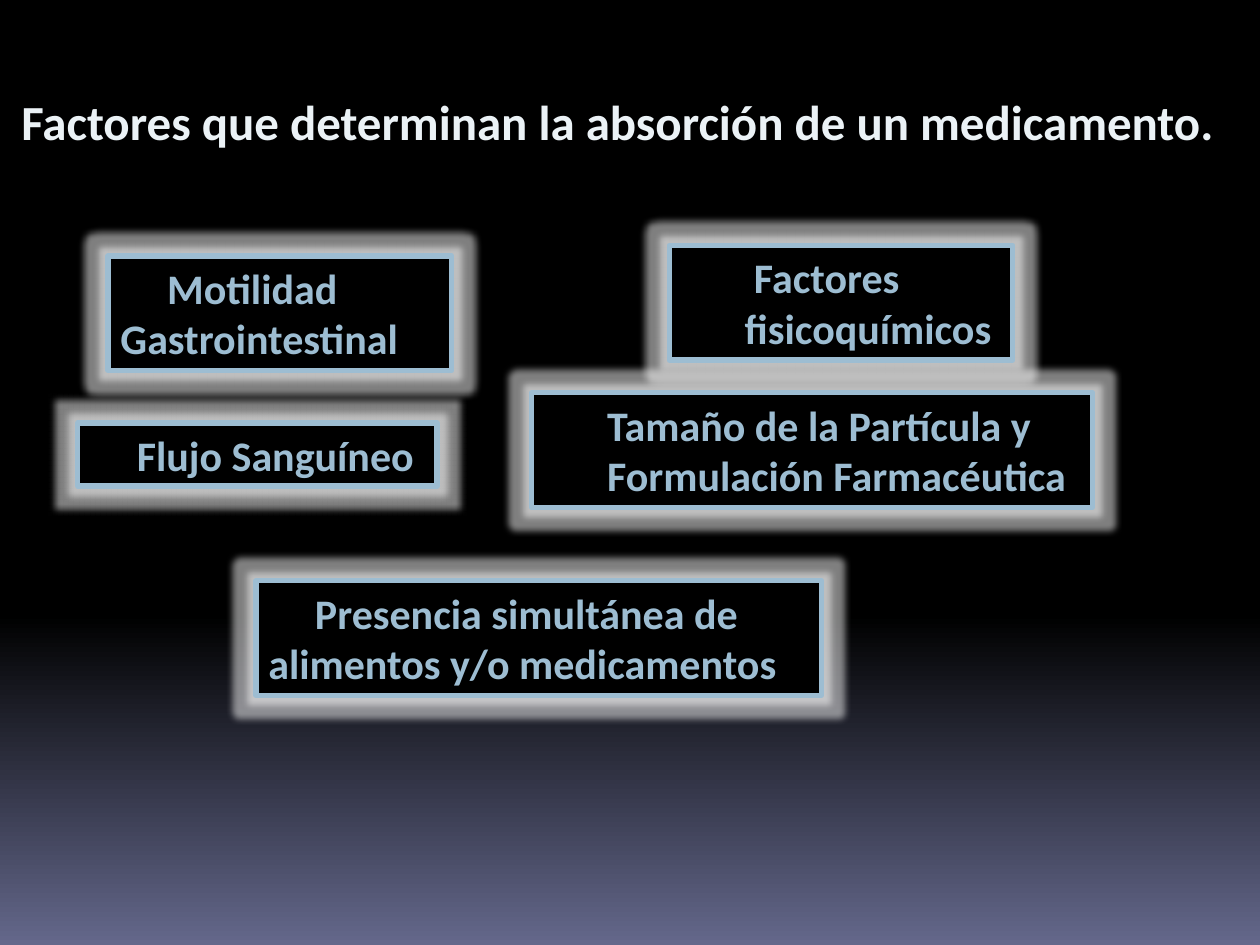
from dataclasses import dataclass

from lxml.etree import SubElement
from pptx import Presentation
from pptx.dml.color import RGBColor
from pptx.enum.shapes import MSO_SHAPE
from pptx.enum.text import MSO_ANCHOR, MSO_AUTO_SIZE, PP_ALIGN
from pptx.oxml.ns import qn
from pptx.util import Cm, Pt

BLACK, PALE_BLUE, ICE, WHITE = "000000", "9DBDD2", "EBF2F6", "FFFFFF"
BULLET_INDENT, SPACE_INDENT, LEVEL_INDENT = 0.94, 0.19, 1.27


@dataclass
class Factor:
    """A boxed factor: wording, place in centimetres and indents."""
    text: str
    left: float
    top: float
    width: float
    height: float = 2.31
    margin: float = 0
    first_line: float = BULLET_INDENT


FACTORS = [
    Factor("Motilidad Gastrointestinal", 2.18, 5.16, 6.93),
    Factor("Flujo Sanguíneo", 1.57, 8.53, 7.24, height=1.27),
    Factor("Tamaño de la Partícula y Formulación Farmacéutica", 10.72, 7.92, 11.3,
           margin=LEVEL_INDENT, first_line=0),
    Factor("Factores fisicoquímicos", 13.49, 4.95, 6.93,
           margin=LEVEL_INDENT, first_line=SPACE_INDENT),
    Factor("Presencia simultánea de alimentos y/o medicamentos", 5.16, 11.71, 11.4),
]


def colour(value: str) -> RGBColor:
    return RGBColor.from_string(value)


def set_values(target, values: dict) -> None:
    for name, value in values.items():
        setattr(target, name, value)


def write(box, text: str, size: float, ink: str, margin: float, first_line: float) -> None:
    frame = box.text_frame
    set_values(frame, {"word_wrap": True, "vertical_anchor": MSO_ANCHOR.TOP})
    para = frame.paragraphs[0]
    para.alignment = PP_ALIGN.LEFT
    properties = para._p.get_or_add_pPr()
    properties.set("marL", str(Cm(margin)))
    properties.set("indent", str(Cm(first_line)))
    span = para.add_run()
    span.text = text
    set_values(span.font, {"name": "Calibri", "size": Pt(size), "bold": True})
    span.font.color.rgb = colour(ink)


def add_glow(box, radius: float, ink: str, opacity: int) -> None:
    effects = box._element.spPr.find(qn("a:effectLst"))
    glow = SubElement(effects, qn("a:glow"), rad=str(Pt(radius)))
    tint = SubElement(glow, qn("a:srgbClr"), val=ink)
    SubElement(tint, qn("a:alpha"), val=str(opacity * 1000))


def draw_factor(page, factor: Factor) -> None:
    box = page.shapes.add_shape(
        MSO_SHAPE.RECTANGLE, Cm(factor.left), Cm(factor.top), Cm(factor.width), Cm(factor.height))
    box.shadow.inherit = False
    add_glow(box, 8, WHITE, 50)
    box.fill.solid()
    box.fill.fore_color.rgb = colour(BLACK)
    box.line.color.rgb = colour(PALE_BLUE)
    box.line.width = Pt(3)
    write(box, factor.text, 24, PALE_BLUE, factor.margin, factor.first_line)
    box.text_frame.auto_size = MSO_AUTO_SIZE.SHAPE_TO_FIT_TEXT


def paint_background(page) -> None:
    fill = page.background.fill
    fill.gradient()
    fill.gradient_angle = 270
    for stop, (position, ink) in zip(fill.gradient_stops, [(0.65, BLACK), (1, "64688B")]):
        stop.position = position
        stop.color.rgb = colour(ink)


def main() -> None:
    """Build the slide on the factors of drug absorption."""
    deck = Presentation()
    set_values(deck, {"slide_width": Cm(25.4), "slide_height": Cm(19.05)})
    page = deck.slides.add_slide(deck.slide_layouts[6])
    paint_background(page)
    title = page.shapes.add_textbox(Cm(0), Cm(1.73), Cm(25.4), Cm(3.81))
    write(title, "Factores que determinan la absorción de un medicamento.", 28, ICE, 0, 0.18)
    for factor in FACTORS:
        draw_factor(page, factor)
    deck.save("out.pptx")


if __name__ == "__main__":
    main()
